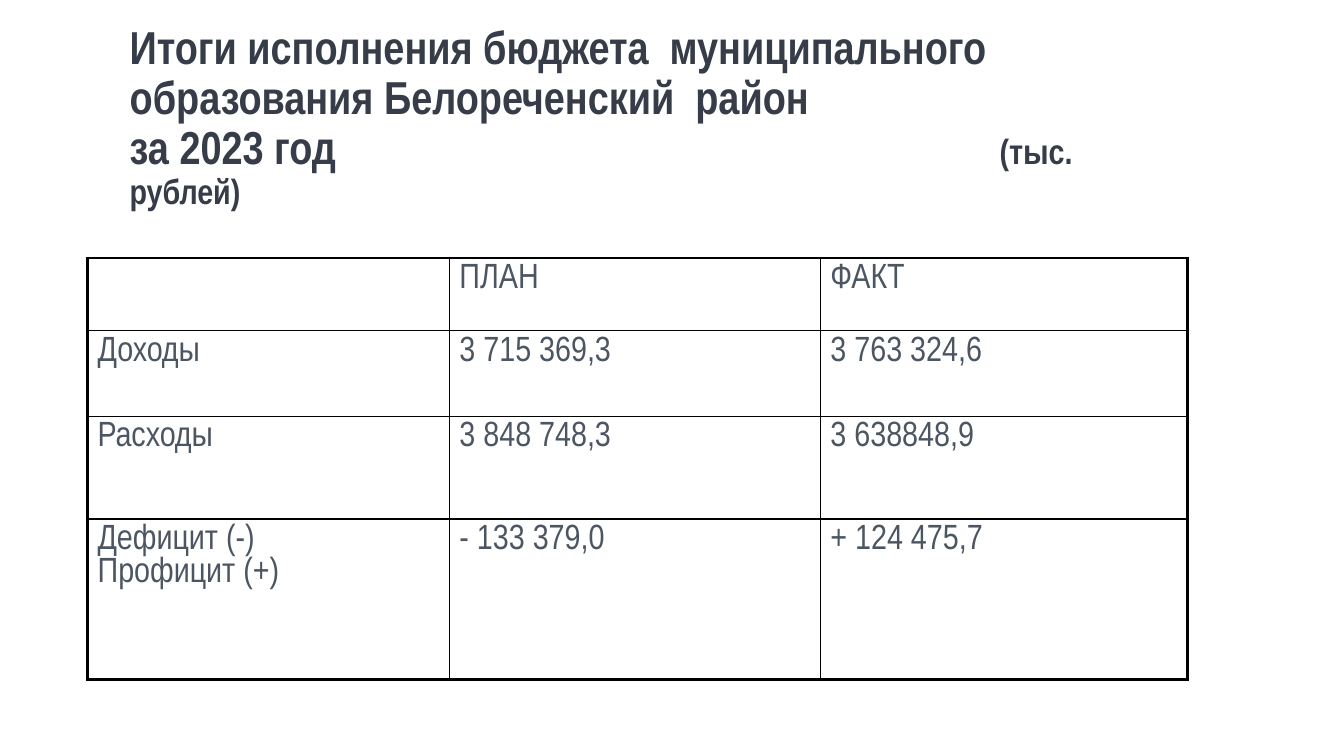
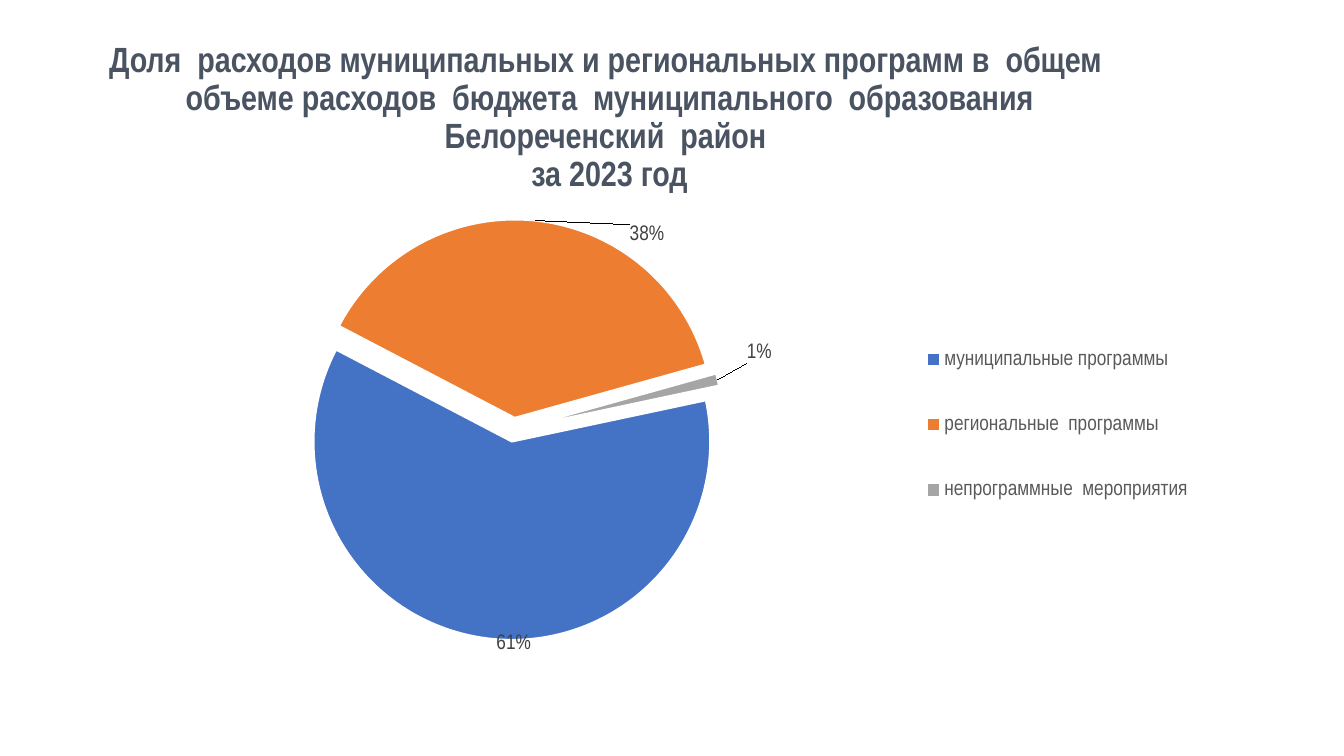
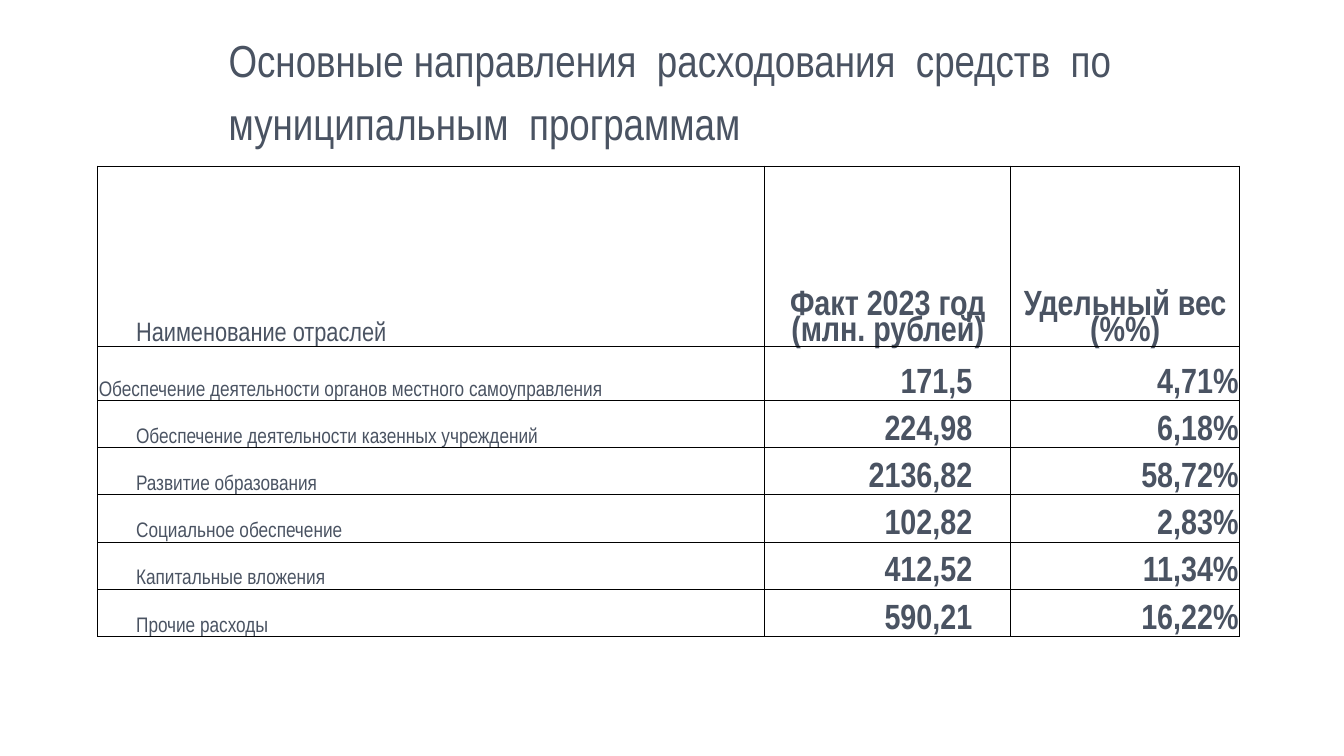
"""Build three slides on the execution of a municipal budget."""
from copy import deepcopy

from lxml import etree
from pptx import Presentation
from pptx.chart.data import CategoryChartData
from pptx.dml.color import RGBColor
from pptx.enum.chart import XL_CHART_TYPE, XL_LABEL_POSITION, XL_LEGEND_POSITION
from pptx.enum.text import MSO_ANCHOR, PP_ALIGN
from pptx.oxml import parse_xml
from pptx.oxml.ns import qn
from pptx.util import Cm, Pt

PIE = XL_CHART_TYPE.PIE
OUTSIDE_END = XL_LABEL_POSITION.OUTSIDE_END
LEGEND_RIGHT = XL_LEGEND_POSITION.RIGHT
TOP, MIDDLE, BOTTOM = MSO_ANCHOR.TOP, MSO_ANCHOR.MIDDLE, MSO_ANCHOR.BOTTOM
LEFT, CENTER, RIGHT = PP_ALIGN.LEFT, PP_ALIGN.CENTER, PP_ALIGN.RIGHT

FONT = "Arial Narrow"
DARK = RGBColor(0x36, 0x3D, 0x48)
SLATE = RGBColor(0x4A, 0x53, 0x62)
CELL_GRAY = RGBColor(0x4C, 0x56, 0x62)
LEGEND_GRAY = RGBColor(0x59, 0x59, 0x59)
LABEL_GRAY = RGBColor(0x40, 0x40, 0x40)
WHITE = RGBColor(0xFF, 0xFF, 0xFF)
BLUE = RGBColor(0x44, 0x72, 0xC4)
ORANGE = RGBColor(0xED, 0x7D, 0x31)
GRAY = RGBColor(0xA5, 0xA5, 0xA5)

CHART_NS = "http://schemas.openxmlformats.org/drawingml/2006/chart"
DRAWING_NS = "http://schemas.openxmlformats.org/drawingml/2006/main"


def write(paragraph, text, size=25, color=SLATE, bold=False, align=LEFT, spacing=None):
    """Append formatted text to a paragraph, breaking lines at vertical tabs."""
    paragraph.alignment = align
    if spacing:
        paragraph.line_spacing = spacing
    for index, line in enumerate(text.split("\v")):
        if index:
            paragraph.add_line_break()
        run = paragraph.add_run()
        run.text = line
        run.font.name = FONT
        run.font.size = Pt(size)
        run.font.bold = bold
        run.font.color.rgb = color


def format_font(font, size, color):
    """Apply the shared typeface to a chart font."""
    font.name = FONT
    font.size = Pt(size)
    font.color.rgb = color


def manual_layout(**values):
    """Return a chart layout element with the given fractions."""
    inner = "".join(f'<c:{name} val="{value}"/>' for name, value in values.items())
    return parse_xml(
        f'<c:layout xmlns:c="{CHART_NS}"><c:manualLayout>{inner}</c:manualLayout></c:layout>'
    )


def set_layout(parent, index, **values):
    """Replace the layout of a chart part."""
    for layout in parent.findall(qn("c:layout")):
        parent.remove(layout)
    parent.insert(index, manual_layout(**values))


def set_borders(cell, widths):
    """Draw black borders, given in points as left, right, top, bottom."""
    properties = cell._tc.get_or_add_tcPr()
    for index, (side, width) in enumerate(zip("LRTB", widths)):
        border = parse_xml(
            f'<a:ln{side} xmlns:a="{DRAWING_NS}" w="{Pt(width)}">'
            '<a:solidFill><a:srgbClr val="000000"/></a:solidFill>'
            f"</a:ln{side}>"
        )
        properties.insert(index, border)


class Deck:
    """Hold the presentation, its style and the current slide."""

    def __init__(self):
        """Start an empty widescreen presentation."""
        self.presentation = Presentation()
        self.presentation.slide_width = Cm(33.87)
        self.presentation.slide_height = Cm(19.05)
        self.slide = None

    def new_slide(self):
        """Add a blank slide and make it current."""
        self.slide = self.presentation.slides.add_slide(self.presentation.slide_layouts[6])

    def title(self, text, left, top, width, spacing=0.9, **style):
        """Add a slide title and return its paragraph."""
        shape = self.slide.shapes.add_textbox(Cm(left), Cm(top), Cm(width), Cm(3.81))
        frame = shape.text_frame
        frame.word_wrap = True
        frame.vertical_anchor = MIDDLE
        write(frame.paragraphs[0], text, spacing=spacing, **style)
        return frame.paragraphs[0]

    def table(self, left, top, widths, heights, rows, style_of, outer=1):
        """Add a table; style_of gives text style, margins and anchor by position."""
        shape = self.slide.shapes.add_table(
            len(heights), len(widths), Cm(left), Cm(top), Cm(sum(widths)), Cm(sum(heights))
        )
        table = shape.table
        table.first_row = table.horz_banding = False
        for column, width in zip(table.columns, widths):
            column.width = Cm(width)
        for row, height in zip(table.rows, heights):
            row.height = Cm(height)
        last_row, last_column = len(heights) - 1, len(widths) - 1
        for i, row in enumerate(rows):
            for j, text in enumerate(row):
                cell = table.cell(i, j)
                style, margins, anchor = style_of(i, j)
                (cell.margin_left, cell.margin_top,
                 cell.margin_right, cell.margin_bottom) = map(Cm, margins)
                cell.vertical_anchor = anchor
                cell.fill.background()
                edges = (j == 0, j == last_column, i == 0, i == last_row)
                set_borders(cell, [outer if edge else 1 for edge in edges])
                frame = cell.text_frame
                for k, line in enumerate(text.split("\n")):
                    paragraph = frame.add_paragraph() if k else frame.paragraphs[0]
                    if line:
                        write(paragraph, line, **style)

    def pie(self, left, top, width, height, slices, start, explosion):
        """Add a pie; each slice is a name, value, colour and label shift."""
        data = CategoryChartData()
        data.categories = [name for name, *_ in slices]
        data.add_series("Series 1", [value for _, value, *_ in slices])
        chart = self.slide.shapes.add_chart(
            PIE, Cm(left), Cm(top), Cm(width), Cm(height), data
        ).chart
        chart.has_title = False
        chart.font.name = "Calibri"
        chart.font.size = Pt(10)
        chart.has_legend = True
        chart.legend.position = LEGEND_RIGHT
        chart.legend.include_in_layout = False
        format_font(chart.legend.font, 15, LEGEND_GRAY)
        set_layout(chart.legend._element, 1, xMode="edge", yMode="edge",
                   x=0.68, y=0.25, w=0.31, h=0.48)

        plot = chart.plots[0]
        plot.vary_by_categories = True
        pie = plot._element
        set_layout(pie.getparent(), 0, layoutTarget="inner", xMode="edge", yMode="edge",
                   x=0.19, y=0.08, w=0.36, h=0.84)
        angle = pie.find(qn("c:firstSliceAng"))
        if angle is None:
            angle = etree.SubElement(pie, qn("c:firstSliceAng"))
        angle.set("val", str(start))

        series = plot.series[0]
        for index, (_, _, color, _) in enumerate(slices):
            slice_format = series.points[index].format
            slice_format.fill.solid()
            slice_format.fill.fore_color.rgb = color
            slice_format.line.color.rgb = WHITE
            slice_format.line.width = Pt(1.5)
        first_point = series._element.find(qn("c:dPt"))
        first_point.addprevious(
            parse_xml(f'<c:explosion xmlns:c="{CHART_NS}" val="{explosion}"/>')
        )

        labels = series.data_labels
        format_font(labels.font, 15, LABEL_GRAY)
        labels.number_format = "0%"
        labels.number_format_is_linked = False
        labels.show_value = False
        labels.show_percentage = True
        labels.position = OUTSIDE_END
        element = labels._element
        shared = [child for child in element if child.tag != qn("c:showLeaderLines")]
        for index, (_, _, _, (x, y)) in enumerate(slices):
            label = parse_xml(
                f'<c:dLbl xmlns:c="{CHART_NS}"><c:idx val="{index}"/></c:dLbl>'
            )
            label.append(manual_layout(x=x, y=y))
            label.extend(deepcopy(shared))
            element.insert(index, label)


def totals_style(row, column):
    """Style the cells of the totals table."""
    return {"color": CELL_GRAY}, (0.25, 0.13, 0.25, 0.13), TOP


def sectors_style(row, column):
    """Style the cells of the spending table."""
    indent, thin = 0.97, 0.03
    left = indent if column == 0 and row != 1 else thin
    right = indent if column == 1 and row else thin
    if column == 0:
        style = {"size": 15 if row else 19}
    elif row == 0:
        style = {"bold": True, "align": CENTER, "spacing": 0.8}
    else:
        style = {"bold": True, "align": RIGHT}
    return style, (left, thin, right, 0), BOTTOM


def main():
    """Build and save the slides."""
    deck = Deck()

    deck.new_slide()
    heading = deck.title(
        "Итоги исполнения бюджета  муниципального  образования Белореченский  район \v"
        "за 2023 год\t",
        3.02, 1.07, 25.35, size=33, color=DARK, bold=True,
    )
    tabs = etree.SubElement(heading._p.get_or_add_pPr(), qn("a:tabLst"))
    etree.SubElement(tabs, qn("a:tab"), pos=str(Cm(21.92)), algn="l")
    write(heading, "(тыс. рублей)", color=DARK, bold=True)
    deck.table(
        2.21, 6.5, [9.12, 9.35, 9.25], [1.83, 2.16, 2.59, 4.04],
        [
            ("", "ПЛАН", "ФАКТ"),
            ("Доходы", "3 715 369,3", "3 763 324,6"),
            ("Расходы", "3 848 748,3", "3 638848,9"),
            ("Дефицит (-)\nПрофицит (+)", "- 133 379,0", "+ 124 475,7"),
        ],
        totals_style, outer=2.25,
    )

    deck.new_slide()
    deck.title(
        "Доля  расходов муниципальных и региональных программ в  общем  объеме расходов  "
        "бюджета  муниципального  образования Белореченский  район \vза 2023 год",
        2.34, 1.07, 26.04, bold=True, align=CENTER,
    )
    deck.pie(
        2.03, 4.52, 29.49, 12.62,
        [
            ("муниципальные программы", 61, BLUE, (0.04, -0.02)),
            ("региональные  программы", 38, ORANGE, (0.08, 0.06)),
            ("непрограммные  мероприятия", 1, GRAY, (0.02, -0.03)),
        ],
        start=78, explosion=6,
    )

    deck.new_slide()
    deck.title(
        "Основные направления  расходования  средств  по муниципальным  программам",
        5.51, 0.28, 22.86, size=32, spacing=Pt(45),
    )
    deck.table(
        2.46, 4.19, [16.81, 6.2, 5.77], [4.55, 1.35] + [1.19] * 5,
        [
            ("Наименование отраслей", "Факт 2023 год\n(млн. рублей)", "Удельный вес (%%)"),
            ("Обеспечение деятельности органов местного самоуправления", "171,5", "4,71%"),
            ("Обеспечение деятельности казенных учреждений", "224,98", "6,18%"),
            ("Развитие образования", "2136,82", "58,72%"),
            ("Социальное обеспечение", "102,82", "2,83%"),
            ("Капитальные вложения", "412,52", "11,34%"),
            ("Прочие расходы", "590,21", "16,22%"),
        ],
        sectors_style,
    )

    deck.presentation.save("out.pptx")


if __name__ == "__main__":
    main()
